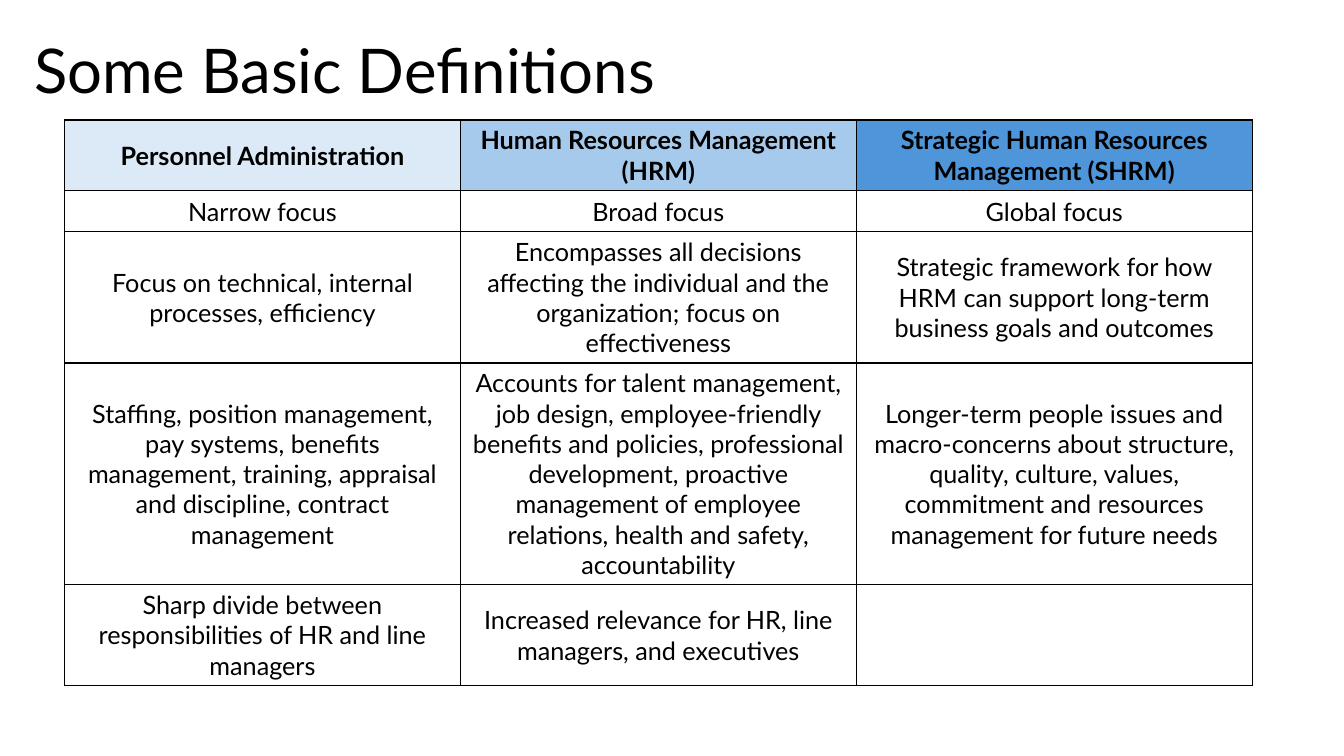
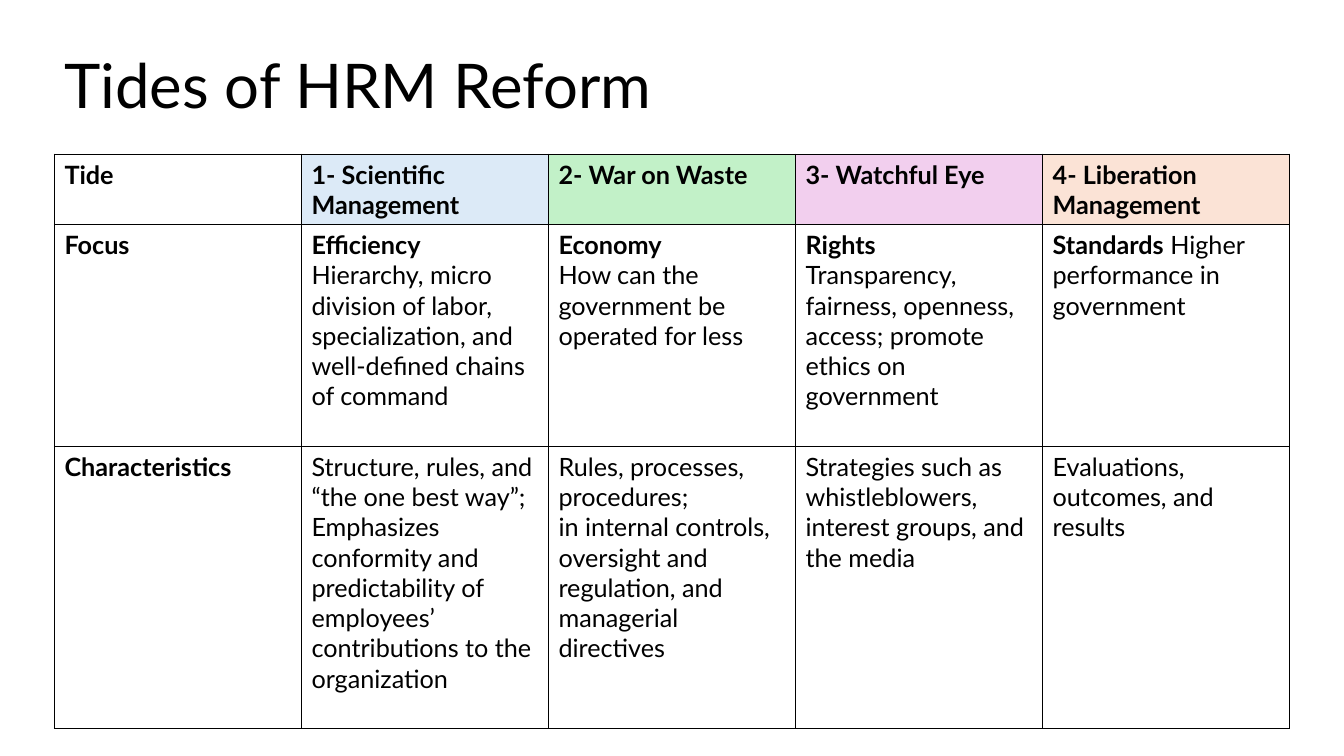
"""Build two slides that compare HRM definitions and reform tides in tables."""
from pptx import Presentation, util as u
from pptx.dml.color import RGBColor
from pptx.enum import text
from pptx.oxml import parse_xml
from pptx.oxml.ns import nsdecls

WIDE, HIGH = 13.33, 7.5
FACE = "Lato"
BLACK = RGBColor(0, 0, 0)
PALE = RGBColor(0xDC, 0xEA, 0xF7)
SKY = RGBColor(0xA6, 0xCA, 0xEC)
BLUE = RGBColor(0x4E, 0x95, 0xD9)
GREEN = RGBColor(0xC2, 0xF1, 0xC8)
PINK = RGBColor(0xF2, 0xCF, 0xEE)
PEACH = RGBColor(0xFB, 0xE3, 0xD6)

TERMS = [
    ["Personnel Administration|", "Human Resources Management (HRM)|",
     "Strategic Human Resources Management (SHRM)|"],
    ["Narrow focus", "Broad focus", "Global focus"],
    ["Focus on technical, internal processes, efficiency",
     "Encompasses all decisions affecting the individual and the organization; "
     "focus on effectiveness",
     "Strategic framework for how HRM can support long-term business goals and outcomes"],
    ["Staffing, position management, pay systems, benefits management, training, "
     "appraisal and discipline, contract management",
     "Accounts for talent management, job design, employee-friendly benefits and policies, "
     "professional development, proactive management of employee relations, "
     "health and safety, accountability",
     "Longer-term people issues and macro-concerns about structure, quality, culture, "
     "values, commitment and resources management for future needs"],
    ["Sharp divide between responsibilities of HR and line managers",
     "Increased relevance for HR, line managers, and executives", ""],
]
TIDES = [
    ["Tide|", "1- Scientific Management|", "2- War on Waste|", "3- Watchful Eye|",
     "4- Liberation Management|"],
    ["Focus|",
     "Efficiency|\nHierarchy, micro division of labor, specialization, "
     "and well-defined chains of command",
     "Economy|\nHow can the government be operated for less",
     "Rights|\nTransparency,\nfairness, openness, access; promote ethics on government",
     "Standards| Higher performance in government"],
    ["Characteristics|",
     "Structure, rules, and “the one best way”;\nEmphasizes conformity and predictability "
     "of employees’ contributions to the organization",
     "Rules, processes, procedures;\nin internal controls, oversight and regulation, "
     "and managerial directives",
     "Strategies such as whistleblowers, interest groups, and the media",
     "Evaluations, outcomes, and results"],
]


def add_run(para, words, size, bold=False):
    """Add one run in the shared face and colour."""
    run = para.add_run()
    run.text = words
    font = run.font
    font.name, font.size, font.bold = FACE, u.Pt(size), bold
    font.color.rgb = BLACK


def add_title(slide, words, left, top):
    """Add the slide title, centred on its band's height."""
    box = slide.shapes.add_textbox(u.Inches(left), u.Inches(top), u.Inches(11.5), u.Inches(1.45))
    frame = box.text_frame
    frame.word_wrap = True
    frame.vertical_anchor = text.MSO_ANCHOR.MIDDLE
    para = frame.paragraphs[0]
    para.line_spacing = 0.9
    add_run(para, words, 44)


def add_rule(cell):
    """Draw a thin black line on each side of a cell."""
    props = cell._tc.get_or_add_tcPr()
    for spot, side in enumerate("LRTB"):
        props.insert(spot, parse_xml(
            f'<a:ln{side} {nsdecls("a")} w="12700"><a:solidFill>'
            f'<a:srgbClr val="{BLACK}"/></a:solidFill></a:ln{side}>'))


def fill_cell(cell, words, tint, align, anchor):
    """Write a cell; words before a bar are bold."""
    if tint is None:
        cell.fill.background()
    else:
        cell.fill.solid()
        cell.fill.fore_color.rgb = tint
    add_rule(cell)
    cell.vertical_anchor = anchor
    frame = cell.text_frame
    for spot, line in enumerate(words.split("\n")):
        para = frame.add_paragraph() if spot else frame.paragraphs[0]
        para.alignment = align
        head, _, rest = line.rpartition("|")
        if head:
            add_run(para, head, 18, True)
        if rest:
            add_run(para, rest, 18)


def add_grid(slide, data, left, top, width, highs, tints, align, anchor):
    """Add a ruled table with equal columns and a tinted head row."""
    count = len(data[0])
    grid = slide.shapes.add_table(len(data), count, u.Inches(left), u.Inches(top),
                                  u.Inches(width), u.Inches(sum(highs))).table
    grid.horz_banding = False
    for col in grid.columns:
        col.width = u.Inches(width / count)
    for r, (row, high) in enumerate(zip(data, highs)):
        grid.rows[r].height = u.Inches(high)
        for c, words in enumerate(row):
            fill_cell(grid.cell(r, c), words, None if r else tints[c], align, anchor)


def main():
    """Build and save the deck."""
    deck = Presentation()
    deck.slide_width, deck.slide_height = u.Inches(WIDE), u.Inches(HIGH)
    blank = deck.slide_layouts[6]

    slide = deck.slides.add_slide(blank)
    add_title(slide, "Some Basic Definitions", 0.24, 0)
    add_grid(slide, TERMS, 0.64, 1.19, 11.78, [0.7, 0.41, 1.3, 2.2, 1],
             [PALE, SKY, BLUE], text.PP_ALIGN.CENTER, text.MSO_ANCHOR.MIDDLE)

    slide = deck.slides.add_slide(blank)
    add_title(slide, "Tides of HRM Reform", 0.54, 0.15)
    add_grid(slide, TIDES, 0.54, 1.53, 12.25, [0.7, 2.2, 2.8],
             [None, PALE, GREEN, PINK, PEACH], text.PP_ALIGN.LEFT, text.MSO_ANCHOR.TOP)

    deck.save("out.pptx")


if __name__ == "__main__":
    main()
